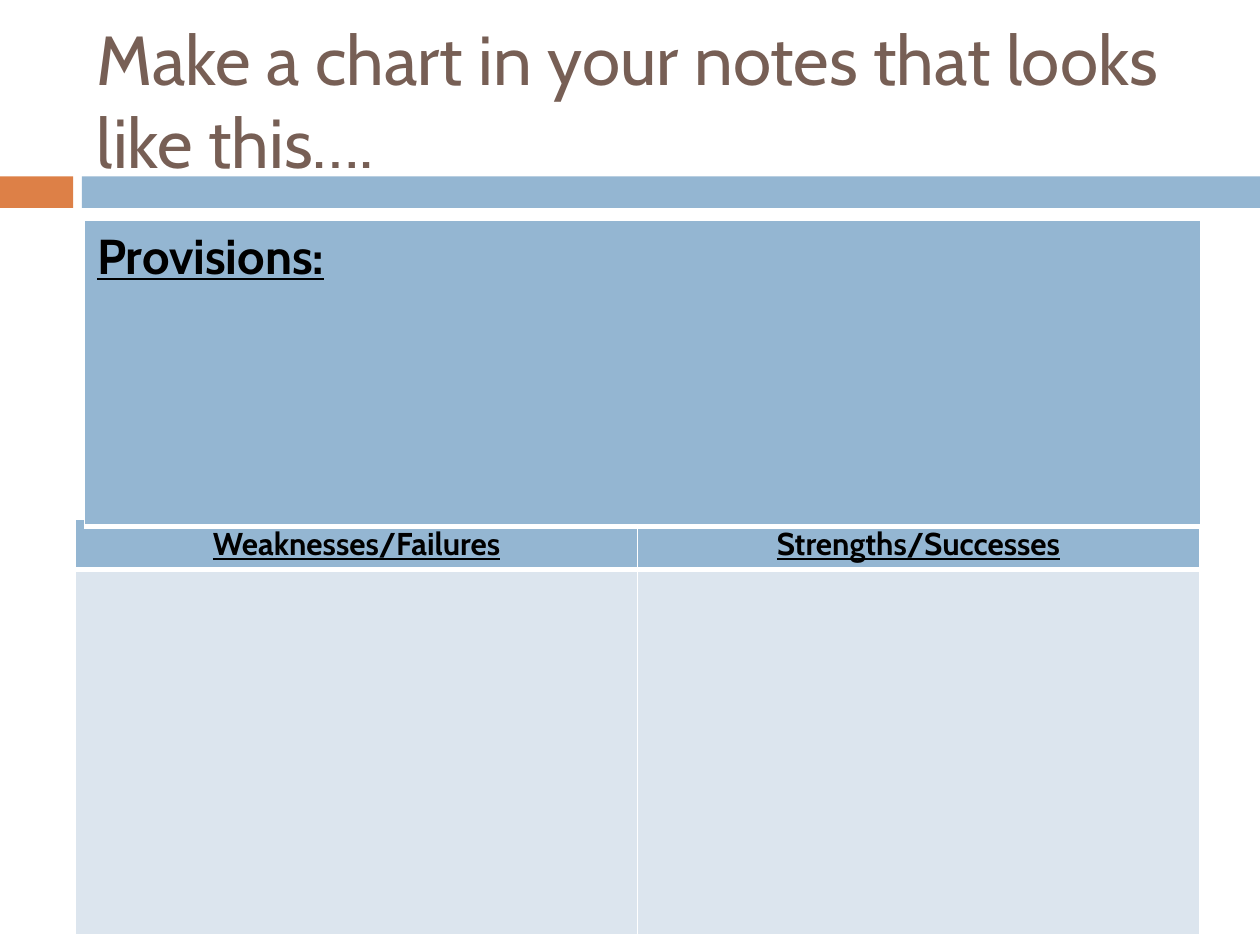
"""Build a slide with a blank note-taking chart."""
from dataclasses import dataclass

from lxml.etree import SubElement
from pptx import Presentation
from pptx.dml.color import RGBColor
from pptx.enum.shapes import MSO_SHAPE
from pptx.enum.text import MSO_ANCHOR, PP_ALIGN
from pptx.oxml.ns import qn
from pptx.slide import Slide
from pptx.table import _Cell
from pptx.text.text import TextFrame
from pptx.util import Inches, Pt

ORANGE = RGBColor(0xDD, 0x80, 0x47)
BLUE = RGBColor(0x94, 0xB6, 0xD2)
PALE_BLUE = RGBColor(0xDC, 0xE5, 0xEE)
BROWN = RGBColor(0x77, 0x5F, 0x55)
BLACK = RGBColor(0x00, 0x00, 0x00)
WHITE = RGBColor(0xFF, 0xFF, 0xFF)


@dataclass(frozen=True)
class Band:
    """A plain coloured bar below the title."""
    left: float
    width: float
    color: RGBColor


@dataclass(frozen=True)
class NoteTable:
    """A table with a header row and optional empty rows below it."""
    left: float
    top: float
    width: float
    row_heights: tuple[float, ...]
    headings: tuple[str, ...]
    size: float
    align: PP_ALIGN


BANDS = (Band(0, 0.58, ORANGE), Band(0.65, 9.35, BLUE))
TABLES = (
    NoteTable(0.6, 4.12, 8.92, (0.4, 2.9),
              ("Weaknesses/Failures", "Strengths/Successes"), 18, PP_ALIGN.CENTER),
    NoteTable(0.67, 1.75, 8.86, (2.43,), ("Provisions:",), 28, PP_ALIGN.LEFT),
)


def write_text(frame: TextFrame, text: str, *, size: float, color: RGBColor,
               align: PP_ALIGN = PP_ALIGN.LEFT, bold: bool = False,
               underline: bool = False) -> None:
    """Write one formatted paragraph into a text frame."""
    paragraph = frame.paragraphs[0]
    paragraph.alignment = align
    run = paragraph.add_run()
    run.text = text
    font = run.font
    font.name, font.size = "Cabin", Pt(size)
    font.bold, font.underline = bold, underline
    font.color.rgb = color


def add_band(slide: Slide, band: Band) -> None:
    """Draw one bar."""
    shape = slide.shapes.add_shape(MSO_SHAPE.RECTANGLE, Inches(band.left), Inches(1.4),
                                   Inches(band.width), Inches(0.25))
    shape.shadow.inherit = False
    shape.fill.solid()
    shape.fill.fore_color.rgb = band.color
    shape.line.fill.background()


def add_title(slide: Slide, text: str) -> None:
    """Place the slide title."""
    box = slide.shapes.add_textbox(Inches(0.67), Inches(0.25), Inches(8.92), Inches(1.08))
    box.text_frame.word_wrap = True
    box.text_frame.vertical_anchor = MSO_ANCHOR.MIDDLE
    write_text(box.text_frame, text, size=39.6, color=BROWN)


def style_cell(cell: _Cell, color: RGBColor, bottom_width: float) -> None:
    """Give a cell white borders and a solid fill."""
    properties = cell._tc.get_or_add_tcPr()
    widths = {"a:lnL": 1, "a:lnR": 1, "a:lnT": 1, "a:lnB": bottom_width}
    for tag, width in widths.items():
        line = SubElement(properties, qn(tag), w=str(Pt(width)))
        fill = SubElement(line, qn("a:solidFill"))
        SubElement(fill, qn("a:srgbClr"), val=str(WHITE))
    cell.fill.solid()
    cell.fill.fore_color.rgb = color


def add_note_table(slide: Slide, note: NoteTable) -> None:
    """Draw one table with its headings and empty cells."""
    table = slide.shapes.add_table(
        len(note.row_heights), len(note.headings), Inches(note.left), Inches(note.top),
        Inches(note.width), Inches(sum(note.row_heights))).table
    for row_index, height in enumerate(note.row_heights):
        table.rows[row_index].height = Inches(height)
        is_header = row_index == 0
        for column_index, heading in enumerate(note.headings):
            cell = table.cell(row_index, column_index)
            style_cell(cell, BLUE if is_header else PALE_BLUE, 3 if is_header else 1)
            if is_header:
                write_text(cell.text_frame, heading, size=note.size, color=BLACK,
                           align=note.align, bold=True, underline=True)


def main() -> None:
    """Build and save the presentation."""
    presentation = Presentation()
    presentation.slide_width, presentation.slide_height = Inches(10), Inches(7.5)
    slide = presentation.slides.add_slide(presentation.slide_layouts[6])
    for band in BANDS:
        add_band(slide, band)
    add_title(slide, "Make a chart in your notes that looks like this….")
    for note in TABLES:
        add_note_table(slide, note)
    presentation.save("out.pptx")


if __name__ == "__main__":
    main()
